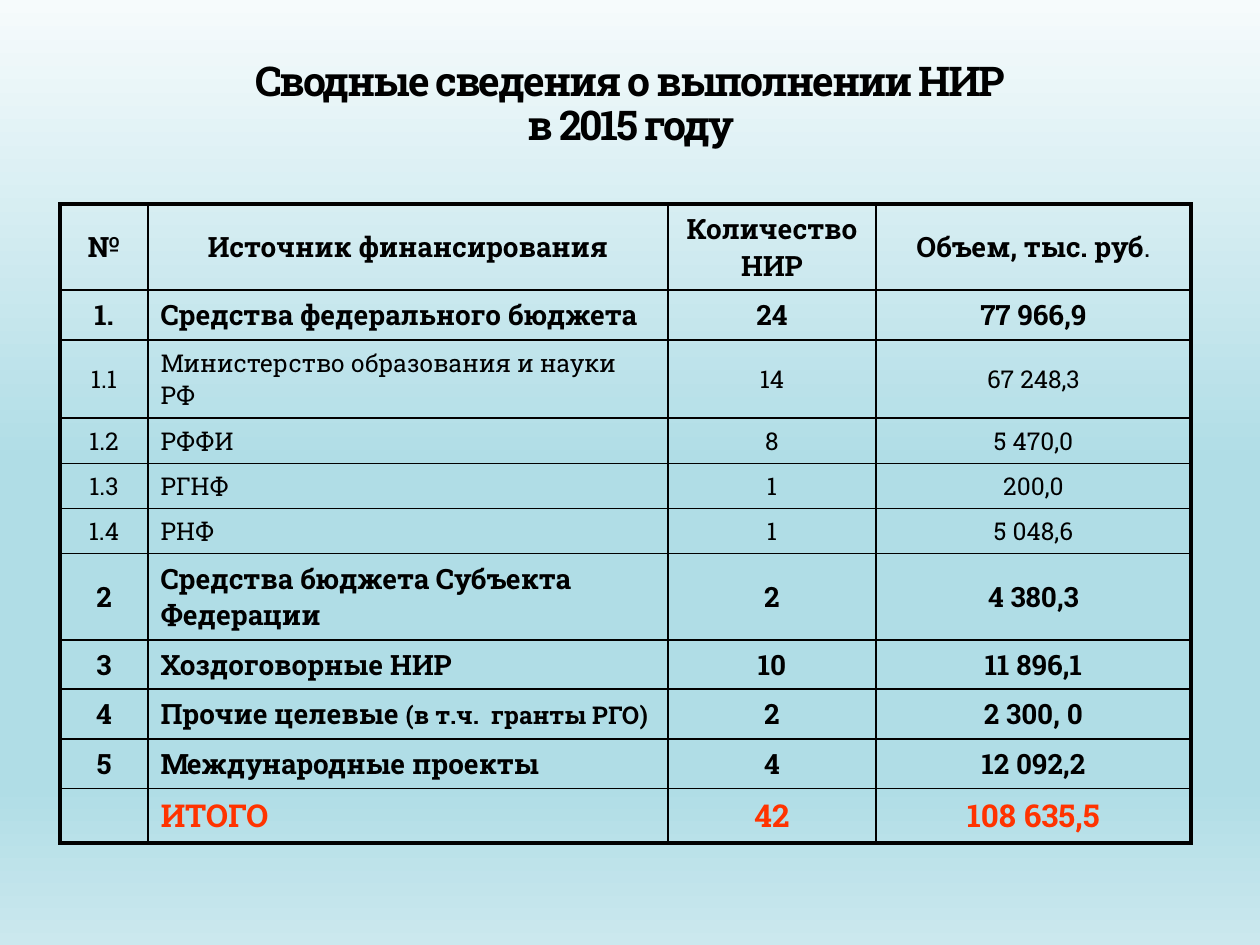
from lxml.etree import SubElement
from pptx import Presentation
from pptx.dml.color import RGBColor
from pptx.enum.text import MSO_ANCHOR as ANCHOR, MSO_AUTO_SIZE as AUTO, PP_ALIGN as ALIGN
from pptx.oxml.ns import qn
from pptx.util import Emu, Pt

BLACK = RGBColor(0x00, 0x00, 0x00)
RED = RGBColor(0xFF, 0x33, 0x00)
ICE = RGBColor(0xF6, 0xFB, 0xFC)
AQUA = RGBColor(0xB0, 0xDD, 0xE6)
PALE = RGBColor(0xCB, 0xE8, 0xEE)
SKY = [(0, ICE), (49, AQUA), (83, AQUA), (100, PALE)]

HEAD = {"size": Pt(16), "bold": True}
ITEM = {"size": Pt(14), "bold": False}
TOTAL = {"size": Pt(18), "bold": True, "color": RED}
COLS = [88, 520, 208, 315]
ROWS = [
    (86, HEAD, ["№", "Источник финансирования", "Количество НИР",
                [("Объем, тыс. руб", {}), (".", {"bold": False})]]),
    (50, HEAD, ["1.", "Средства федерального бюджета", "24", "77 966,9"]),
    (78, ITEM, ["1.1", "Министерство образования и науки РФ", "14", "67 248,3"]),
    (45, ITEM, ["1.2", "РФФИ", "8", "5 470,0"]),
    (45, ITEM, ["1.3", "РГНФ", "1", "200,0"]),
    (45, ITEM, ["1.4", "РНФ", "1", "5 048,6"]),
    (86, HEAD, ["2", "Средства бюджета Субъекта Федерации", "2", "4 380,3"]),
    (49, HEAD, ["3", "Хоздоговорные НИР", "10", "11 896,1"]),
    (50, HEAD, ["4", [("Прочие целевые ", {}), ("(в т.ч.  гранты РГО)", {"size": Pt(14)})],
                "2", "2 300, 0"]),
    (49, HEAD, ["5", "Международные проекты", "4", "12 092,2"]),
    (54, TOTAL, ["", "ИТОГО", "42", "108 635,5"]),
]


def px(n):
    return Emu(round(n * 914400 / 126))


class Deck:
    """Holds the text style and the current slide, and draws each kind of element."""

    def __init__(self, width, height, font):
        self.prs = Presentation()
        self.prs.slide_width, self.prs.slide_height = px(width), px(height)
        self.font = font
        self.s = self.prs.slides.add_slide(self.prs.slide_layouts[5])

    def style(self, r, fmt):
        values = {"name": self.font, "color": BLACK, **fmt}
        r.font.color.rgb = values.pop("color")
        for key, value in values.items():
            setattr(r.font, key, value)

    def background(self, stops):
        fill = self.s.background.fill
        fill.gradient()
        fill.gradient_angle = 270
        lst = next(self.s.element.iter(qn("a:gsLst")))
        lst.clear()
        for pos, color in stops:
            gs = SubElement(lst, qn("a:gs"), pos=str(pos * 1000))
            SubElement(gs, qn("a:srgbClr"), val=str(color))

    def title(self, text, box, fmt, spacing):
        sp = self.s.shapes.title
        sp.left, sp.top, sp.width, sp.height = map(px, box)
        tf = sp.text_frame
        tf.word_wrap, tf.auto_size = True, AUTO.NONE
        tf.vertical_anchor = ANCHOR.MIDDLE
        p = tf.paragraphs[0]
        p.text = text
        p.alignment, p.line_spacing = ALIGN.CENTER, 0.9
        for r in p.runs:
            self.style(r, fmt)
            r.font._element.set("spc", str(spacing))

    def border(self, cell, side, width):
        ln = SubElement(cell._tc.get_or_add_tcPr(), qn(f"a:ln{side}"), w=str(Pt(width)))
        SubElement(SubElement(ln, qn("a:solidFill")), qn("a:srgbClr"), val=str(BLACK))

    def cell(self, cell, content, fmt, align):
        cell.vertical_anchor = ANCHOR.MIDDLE
        p = cell.text_frame.paragraphs[0]
        p.alignment = align
        runs = [(content, {})] if isinstance(content, str) else content
        for text, extra in runs:
            if text:
                r = p.add_run()
                r.text = text
                self.style(r, {**fmt, **extra})

    def table(self, left, top, cols, rows):
        heights = [height for height, _, _ in rows]
        box = map(px, (left, top, sum(cols), sum(heights)))
        tbl = self.s.shapes.add_table(len(rows), len(cols), *box).table
        tbl.first_row = tbl.horz_banding = False
        for col, width in zip(tbl.columns, cols):
            col.width = px(width)
        for i, (height, fmt, texts) in enumerate(rows):
            tbl.rows[i].height = px(height)
            for j, content in enumerate(texts):
                cell = tbl.cell(i, j)
                self.cell(cell, content, fmt, ALIGN.LEFT if i and j == 1 else ALIGN.CENTER)
                outer = {"L": j == 0, "R": j == len(cols) - 1,
                         "T": i == 0, "B": i == len(rows) - 1}
                for side, edge in outer.items():
                    self.border(cell, side, 2.25 if edge else 1)
                cell.fill.background()


def main():
    deck = Deck(1260, 945, "Roboto Slab")
    deck.background(SKY)
    deck.title("Сводные сведения о выполнении НИР\vв 2015 году", (69, 55, 1122, 100),
               {"size": Pt(23.4), "bold": True}, -120)
    deck.table(60, 204, COLS, ROWS)
    deck.prs.save("out.pptx")


if __name__ == "__main__":
    main()
